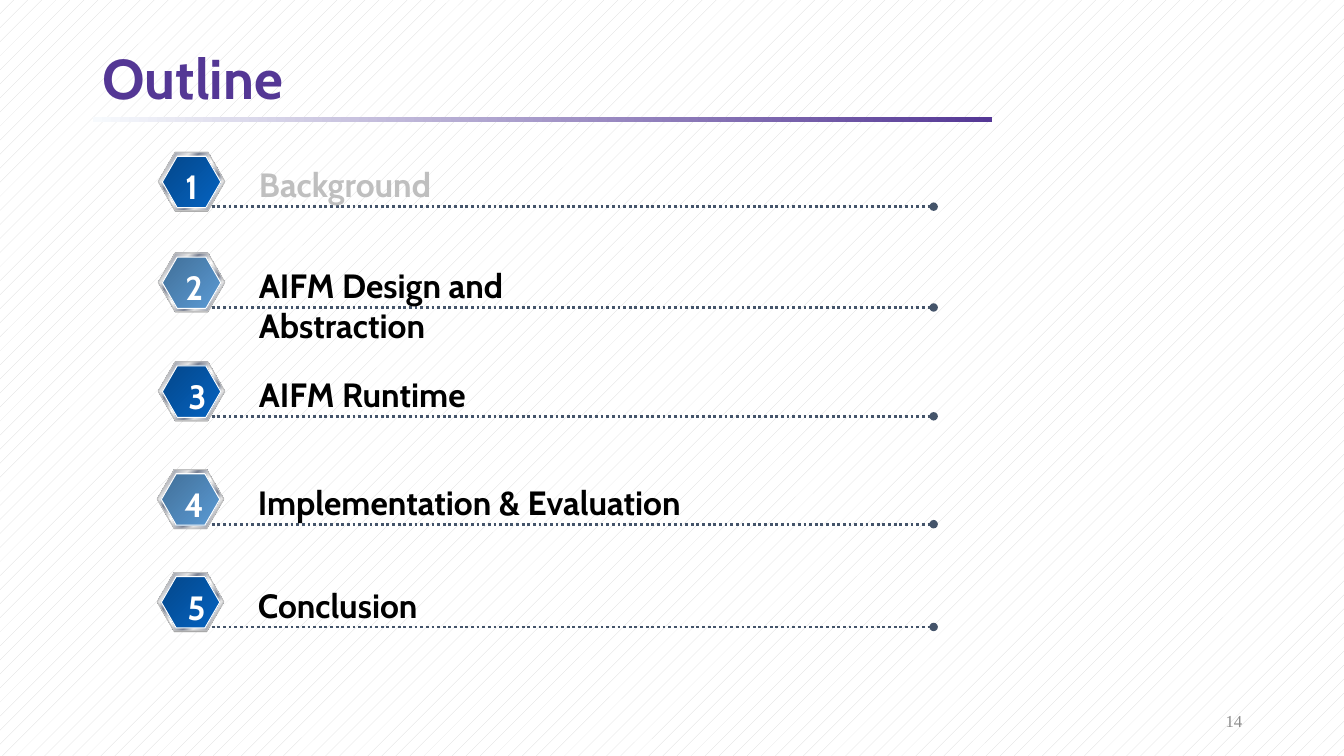
from dataclasses import dataclass

from lxml import etree
from pptx import Presentation
from pptx import util as u
from pptx.dml.color import RGBColor
from pptx.enum import dml, shapes, text
from pptx.oxml.ns import qn

PX = 9144  # 100 px to the inch
PURPLE, WHITE, BLACK, SLATE = "543795", "FFFFFF", "000000", "44546A"
NAVY = [(0, "04478A"), (100, "0563C1")]
STEEL = [(0, "416F98"), (100, "5B9BD5")]
SILVER = [(0, "E6E6E6"), (7, "7D8496"), (26, "E6E6E6"), (34, "7D8496"),
          (46, "E6E6E6"), (50, "FFFFFF"), (54, "E6E6E6"), (66, "7D8496"),
          (74, "E6E6E6"), (93, "7D8496"), (100, "E6E6E6")]


@dataclass
class Topic:
    title: str
    left: int
    top: int
    number_left: int
    width: int
    height: int
    color: str = BLACK


TOPICS = [
    Topic("Background", 157, 151, 174, 208, 50, "BFBFBF"),
    Topic("AIFM Design and Abstraction", 157, 251, 174, 388, 41),
    Topic("AIFM Runtime", 157, 359, 177, 253, 50),
    Topic("Implementation & Evaluation", 156, 466, 173, 485, 91),
    Topic("Conclusion", 156, 568, 176, 194, 91),
]


def px(*lengths: int) -> list[u.Emu]:
    return [u.Emu(length * PX) for length in lengths]


def rgb(color: str) -> RGBColor:
    return RGBColor.from_string(color)


def set_all(target, values: dict) -> None:
    for name, value in values.items():
        setattr(target, name, value)


def paint_solid(shape, color: str) -> None:
    shape.fill.solid()
    shape.fill.fore_color.rgb = rgb(color)


def paint_gradient(shape, stops: list[tuple[int, str]], angle: int) -> None:
    shape.fill.gradient()
    shape.fill.gradient_angle = angle
    stop_list = shape._element.spPr.find(qn("a:gradFill")).find(qn("a:gsLst"))
    for default_stop in list(stop_list):
        stop_list.remove(default_stop)
    for percent, color in stops:
        stop = etree.SubElement(stop_list, qn("a:gs"), pos=str(percent * 1000))
        etree.SubElement(stop, qn("a:srgbClr"), val=color)


def add_plain_shape(parent, kind, box: tuple, outline: str = ""):
    shape = parent.add_shape(kind, *px(*box))
    shape.shadow.inherit = False
    if outline:
        shape.line.color.rgb = rgb(outline)
        shape.line.width = u.Pt(0.75)
    else:
        shape.line.fill.background()
    return shape


def add_label(slide, words: str, box: tuple, size: int, color: str,
              font: str = "Cabin", bold: bool = True, frame: dict | None = None,
              paragraph: dict | None = None) -> None:
    label = slide.shapes.add_textbox(*px(*box)).text_frame
    set_all(label, {"word_wrap": True, **(frame or {})})
    line = label.paragraphs[0]
    line.text = words
    set_all(line, paragraph or {})
    set_all(line.runs[0].font, {"name": font, "size": u.Pt(size), "bold": bold})
    line.runs[0].font.color.rgb = rgb(color)


def add_hexagon(parent, left: int, top: int, width: int, height: int,
                outline: str = ""):
    hexagon = add_plain_shape(parent, shapes.MSO_SHAPE.HEXAGON,
                              (left, top, width, height), outline)
    hexagon.adjustments[0] = 0.289
    hexagon.adjustments[1] = 1.155
    return hexagon


def add_badge(slide, left: int, top: int, face: list[tuple[int, str]]) -> None:
    badge = slide.shapes.add_group_shape().shapes
    paint_solid(add_hexagon(badge, left, top + 1, 66, 58), "808080")
    paint_gradient(add_hexagon(badge, left, top, 66, 58, "C0C0C0"), SILVER, 315)
    paint_gradient(add_hexagon(badge, left + 4, top + 4, 58, 51, WHITE), face, 315)


def add_dotted_rule(slide, y: int) -> None:
    rule = slide.shapes.add_connector(shapes.MSO_CONNECTOR.STRAIGHT,
                                      *px(210, y, 926, y))
    rule.line.color.rgb = rgb(SLATE)
    set_all(rule.line, {"width": u.Pt(2), "dash_style": dml.MSO_LINE.ROUND_DOT})
    etree.SubElement(rule.line._get_or_add_ln(), qn("a:tailEnd"), type="oval")
    etree.SubElement(rule._element.spPr, qn("a:effectLst"))


def add_topic(slide, number: int, topic: Topic) -> None:
    grow = {"auto_size": text.MSO_AUTO_SIZE.SHAPE_TO_FIT_TEXT}
    add_badge(slide, topic.left, topic.top, NAVY if number % 2 else STEEL)
    add_dotted_rule(slide, topic.top + 54)
    add_label(slide, topic.title,
              (topic.left + 90, topic.top + 7, topic.width, topic.height),
              24, topic.color, frame=grow)
    add_label(slide, str(number), (topic.number_left, topic.top + 9, 31, 41),
              24, WHITE, frame={**grow, "word_wrap": False},
              paragraph={"alignment": text.PP_ALIGN.CENTER})


def main() -> None:
    deck = Presentation()
    deck.slide_width, deck.slide_height = px(1333, 750)
    slide = deck.slides.add_slide(deck.slide_layouts[6])

    # Patterned background
    backdrop = slide.background.fill
    backdrop.patterned()
    backdrop.pattern = dml.MSO_PATTERN.PERCENT_5
    backdrop.fore_color.rgb = rgb("D9D9D9")
    backdrop.back_color.rgb = rgb(WHITE)

    # Title, underline and page number
    middle = {"vertical_anchor": text.MSO_ANCHOR.MIDDLE}
    underline = add_plain_shape(slide.shapes, shapes.MSO_SHAPE.RECTANGLE,
                                (92, 116, 892, 5))
    paint_gradient(underline, [(0, "F7FAFD"), (100, PURPLE)], 0)
    add_label(slide, "Outline", (92, 43, 1150, 75), 40, PURPLE, frame=middle,
              paragraph={"line_spacing": 0.9})
    add_label(slide, "14", (942, 695, 300, 40), 12, "8C8C8C",
              "Times New Roman", False, middle,
              {"alignment": text.PP_ALIGN.RIGHT})

    # Numbered topics
    for number, topic in enumerate(TOPICS, start=1):
        add_topic(slide, number, topic)

    deck.save("out.pptx")


if __name__ == "__main__":
    main()
